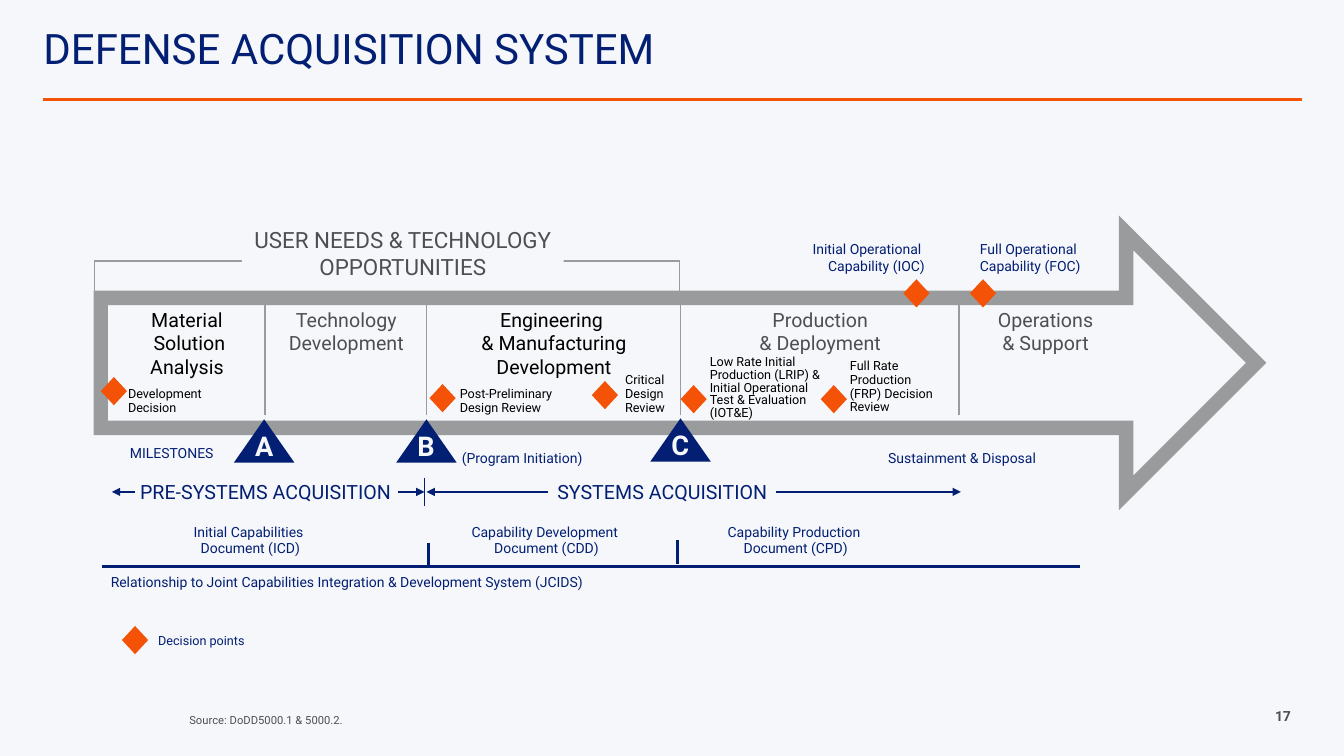
from lxml import etree
from pptx import Presentation
from pptx import util as u
from pptx.dml.color import RGBColor
from pptx.enum import shapes, text
from pptx.oxml.ns import qn

COLORS = {"back": "F6F7FA", "navy": "031F73", "orange": "F45206",
          "gray": "9A9B9C", "dark": "4D4F53", "black": "000000"}
FONT = "Roboto"
ALIGN = {"l": text.PP_ALIGN.LEFT, "c": text.PP_ALIGN.CENTER, "r": text.PP_ALIGN.RIGHT}
PADDED = (0.1, 0.05, 0.1, 0.05)


class SlideBuilder:
    """Holds the style and the current slide."""

    def __init__(self, slide):
        self.slide = slide
        slide.background.fill.solid()
        slide.background.fill.fore_color.rgb = self.color("back")

    def color(self, name):
        """Return the named colour."""
        return RGBColor.from_string(COLORS[name])

    def fill_text(self, shape, words, size, color, align="l", bold=False,
                  spacing=None, inset=(0, 0, 0, 0), wrap=True, anchor=text.MSO_ANCHOR.TOP):
        """Fill a shape; \\n starts a paragraph and | breaks a line."""
        frame = shape.text_frame
        frame.word_wrap = wrap
        frame.vertical_anchor = anchor
        (frame.margin_left, frame.margin_top,
         frame.margin_right, frame.margin_bottom) = map(u.Inches, inset)
        for index, content in enumerate(words.split("\n")):
            paragraph = frame.paragraphs[0] if index == 0 else frame.add_paragraph()
            paragraph.alignment = ALIGN[align]
            if spacing:
                paragraph.line_spacing = spacing
            for part, line in enumerate(content.split("|")):
                if part:
                    paragraph.add_line_break()
                run = paragraph.add_run()
                run.text = line
                run.font.name = FONT
                run.font.size = u.Pt(size)
                run.font.bold = bold
                run.font.color.rgb = self.color(color)

    def title(self, words, box):
        """Place and format the title placeholder."""
        shape = self.slide.shapes.title
        shape.left, shape.top, shape.width, shape.height = map(u.Inches, box)
        self.fill_text(shape, words, 30, "navy", spacing=0.8,
                       inset=(0, 0.1, 0.2, 0.1), anchor=text.MSO_ANCHOR.MIDDLE)

    def label(self, words, box, size=10, color="navy", **style):
        """Add a text box."""
        shape = self.slide.shapes.add_textbox(*map(u.Inches, box))
        self.fill_text(shape, words, size, color, **style)
        return shape

    def shape(self, kind, box, fill=None, line=None, width=1):
        """Add a preset shape."""
        shape = self.slide.shapes.add_shape(kind, *map(u.Inches, box))
        shape.shadow.inherit = False
        if fill:
            shape.fill.solid()
            shape.fill.fore_color.rgb = self.color(fill)
        else:
            shape.fill.background()
        if line:
            shape.line.color.rgb = self.color(line)
            shape.line.width = u.Pt(width)
            outline = shape._element.spPr.find(qn("a:ln"))
            etree.SubElement(outline, qn("a:miter"), lim="800000")
        else:
            shape.line.fill.background()
        return shape

    def diamond(self, x, y):
        """Add a decision point centred at x, y."""
        self.shape(shapes.MSO_SHAPE.DIAMOND, (x - 0.13, y - 0.14, 0.26, 0.28), "orange")

    def milestone(self, letter, x, top):
        """Add a lettered milestone triangle with its apex at x, top."""
        self.shape(shapes.MSO_SHAPE.ISOSCELES_TRIANGLE, (x - 0.3, top, 0.6, 0.43), "navy")
        self.label(letter, (x - 0.09, top + 0.1, 0.17, 0.33), 19.4, "back",
                   bold=True, wrap=False)

    def line(self, start, end, color="navy", width=1, arrow=False):
        """Add a straight connector, optionally with an arrowhead at its end."""
        connector = self.slide.shapes.add_connector(
            shapes.MSO_CONNECTOR.STRAIGHT, *map(u.Inches, start + end))
        connector.line.color.rgb = self.color(color)
        connector.line.width = u.Pt(width)
        properties = connector._element.spPr
        if arrow:
            etree.SubElement(properties.find(qn("a:ln")), qn("a:tailEnd"), type="triangle")
        etree.SubElement(properties, qn("a:effectLst"))
        return connector


def main():
    """Build the acquisition system slide."""
    presentation = Presentation()
    presentation.slide_width = u.Inches(13.33)
    presentation.slide_height = u.Inches(7.5)
    page = SlideBuilder(presentation.slides.add_slide(presentation.slide_layouts[5]))

    page.title("DEFENSE ACQUISITION SYSTEM", (0.43, 0, 12.49, 1.04))
    page.line((12.91, 0.99), (0.43, 0.99), "orange", 2.25)
    page.label("17", (12.54, 6.97, 0.37, 0.27), 10, "dark", align="c", bold=True,
               inset=PADDED, wrap=False)
    page.label("Source: DoDD5000.1 & 5000.2.", (1.78, 7.03, 1.74, 0.23), 8, "dark",
               inset=PADDED, wrap=False)

    page.shape(shapes.MSO_SHAPE.RIGHT_ARROW, (1, 2.31, 11.46, 2.58), "back", "gray", 10.25)
    page.shape(shapes.MSO_SHAPE.RECTANGLE, (0.94, 2.59, 5.8, 0.32), line="gray")
    needs = page.shape(shapes.MSO_SHAPE.RECTANGLE, (2.4, 2.24, 3.19, 0.54), "back")
    page.fill_text(needs, "USER NEEDS & TECHNOLOGY OPPORTUNITIES", 16, "dark", align="c")
    for x in (2.63, 4.23, 6.75, 9.51):
        page.line((x, 4.12), (x, 3.03), "gray")

    for words, left, width, height, color, wrap in (
            ("Material\n Solution\nAnalysis", 1.07, 1.57, 0.71, "black", True),
            ("Technology\nDevelopment", 2.63, 1.61, 0.48, "dark", True),
            ("Engineering |& Manufacturing\nDevelopment", 4.23, 2.53, 0.71, "black", True),
            ("Production |& Deployment ", 7.51, 1.3, 0.48, "dark", False),
            ("Operations |& Support ", 9.88, 1.03, 0.48, "dark", False)):
        page.label(words, (left, 3.05, width, height), 14, color, align="c", wrap=wrap)

    for words, box, spacing, wrap in (
            ("Development\nDecision", (1.27, 3.85, 1.37, 0.27), 0.9, True),
            ("Post-Preliminary\nDesign Review", (4.56, 3.85, 0.99, 0.27), 0.9, False),
            ("Critical\nDesign\nReview", (6.2, 3.71, 0.43, 0.41), 0.9, False),
            ("Low Rate Initial\nProduction (LRIP) & Initial Operational Test & Evaluation (IOT&E)",
             (7.04, 3.54, 1.11, 0.63), u.Pt(9), True),
            ("Full Rate |Production\n(FRP) Decision\nReview",
             (8.43, 3.57, 0.99, 0.55), 0.9, True)):
        page.label(words, box, 9, "black", spacing=spacing, wrap=wrap)

    for x, y in ((1.13, 3.88), (4.39, 3.95), (6, 3.92), (6.88, 3.96), (8.27, 3.96),
                 (9.09, 2.91), (9.75, 2.91), (1.34, 6.35)):
        page.diamond(x, y)
    page.label("Decision points", (1.47, 6.23, 1.08, 0.25), 9, inset=PADDED, wrap=False)
    page.label("Initial Operational \nCapability (IOC)", (7.92, 2.34, 1.35, 0.44),
               align="r", inset=PADDED, wrap=False)
    page.label("Full Operational\nCapability (FOC)", (9.62, 2.34, 1.22, 0.44),
               inset=PADDED, wrap=False)

    for letter, x, top in (("A", 2.62, 4.16), ("B", 4.23, 4.16), ("C", 6.75, 4.15)):
        page.milestone(letter, x, top)
    page.label("MILESTONES", (1.19, 4.36, 1.04, 0.27), inset=PADDED, wrap=False)
    page.label("(Program Initiation)", (4.58, 4.46, 1.41, 0.17))
    page.label("Sustainment & Disposal", (8.81, 4.46, 1.86, 0.17))

    before = page.label("PRE-SYSTEMS ACQUISITION", (1.06, 4.76, 3.15, 0.24), 14, align="c")
    systems = page.label("SYSTEMS ACQUISITION", (5.44, 4.76, 2.26, 0.24), 14, align="c")
    page.line((1.34, 4.88), (1.11, 4.88), arrow=True)
    page.line((3.95, 4.88), (4.21, 4.88), arrow=True).end_connect(before, 3)
    page.line((5.44, 4.88), (4.23, 4.88), arrow=True).begin_connect(systems, 1)
    page.line((7.7, 4.88), (9.53, 4.88), arrow=True).begin_connect(systems, 3)
    page.line((4.21, 4.74), (4.21, 5.02))

    for words, left, width in (
            ("Initial Capabilities\n Document (ICD)", 1.07, 2.79),
            ("Capability Development \nDocument (CDD)", 3.38, 4.08),
            ("Capability Production\n Document (CPD)", 6.06, 3.63)):
        page.label(words, (left, 5.14, width, 0.44), align="c", inset=PADDED)
    page.line((1.01, 5.62), (10.71, 5.62), width=2.25)
    for x, top in ((4.25, 5.39), (6.72, 5.36)):
        page.line((x, top), (x, top + 0.24), width=2.25)
    page.label("Relationship to Joint Capabilities Integration & Development System (JCIDS)",
               (1, 5.64, 9.01, 0.27), inset=PADDED)

    presentation.save("out.pptx")


if __name__ == "__main__":
    main()
